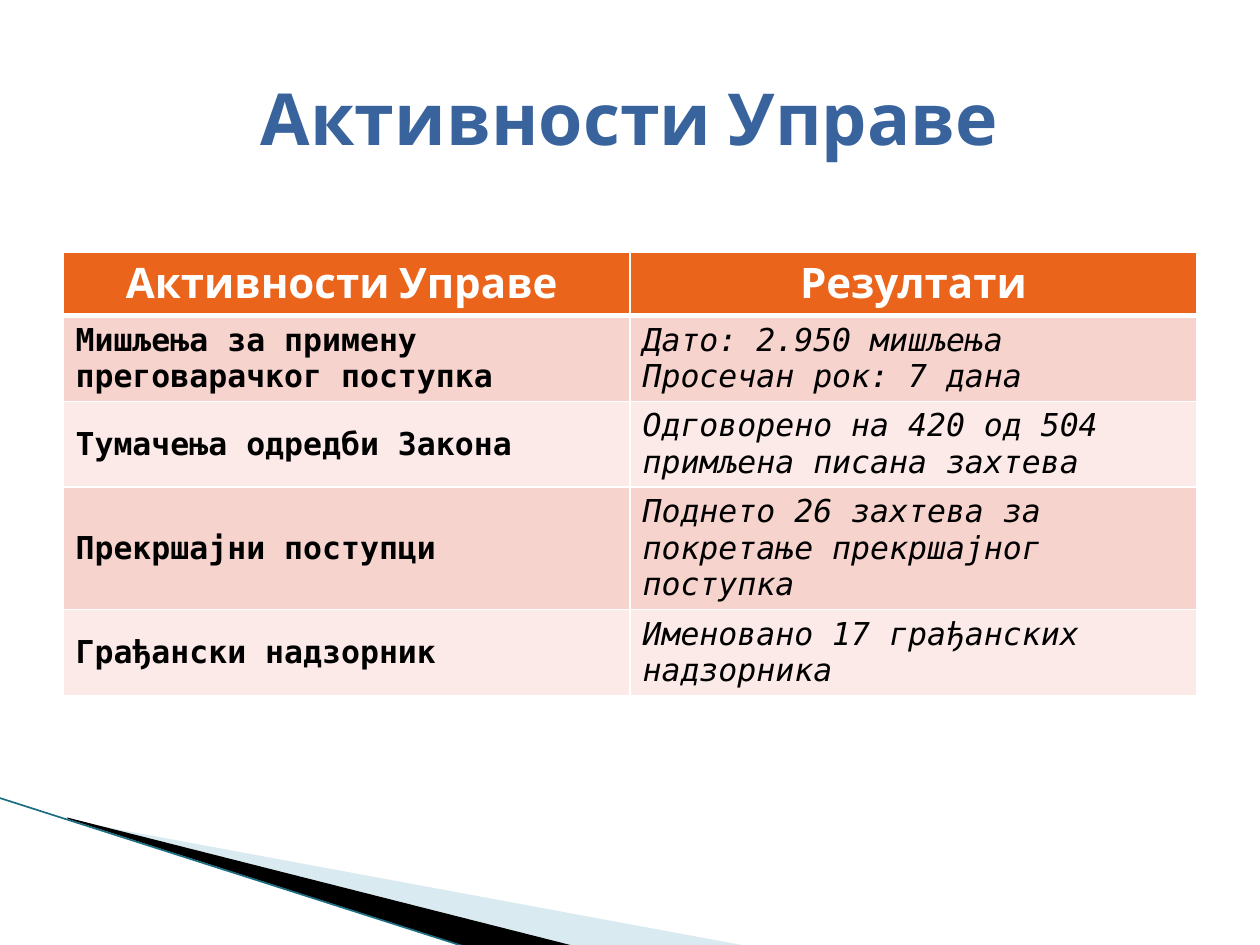
from lxml import etree
from pptx import Presentation
from pptx import util as u
from pptx.dml.color import RGBColor
from pptx.enum import shapes, text
from pptx.oxml import ns

WHITE = RGBColor(0xFF, 0xFF, 0xFF)
BLACK = RGBColor(0, 0, 0)
TITLE_BLUE = RGBColor(0x39, 0x63, 0x9D)
ORANGE = RGBColor(0xEB, 0x64, 0x1B)
ROW_PINKS = [RGBColor(0xF7, 0xD3, 0xCD), RGBColor(0xFB, 0xEA, 0xE8)]
PALE_BLUE = RGBColor(0xA0, 0xCB, 0xDC)
TEAL = RGBColor(0x1B, 0x6E, 0x82)

HEADING_FONT = "Cabin"
BODY_FONT = "DejaVu Sans Mono"

TITLE = "Активности Управе"
ROWS = [
    ("Активности Управе ", "Резултати"),
    ("Мишљења за примену преговарачког поступка",
     "Дато: 2.950 мишљења\nПросечан рок: 7 дана"),
    ("Тумачења одредби Закона",
     "Одговорено на 420 од 504 примљена писана захтева"),
    ("Прекршајни поступци",
     "Поднето 26 захтева за покретање прекршајног поступка"),
    ("Грађански надзорник", "Именовано 17 грађанских надзорника"),
]

# Corner decoration: points in cm, fill colour, opacity in percent
WEDGES = [
    ([(1.4, 16.54), (15.11, 19.08), (11.58, 19.08), (1.4, 16.51)], PALE_BLUE, 40),
    ([(1.35, 16.48), (11.61, 19.08), (9.45, 19.1), (1.37, 16.51)], BLACK, 100),
]
EDGE = [(-0.03, 16.08), (9.42, 19.1)]

MARGIN = 1.27
CONTENT_WIDTH = 22.86


def to_cm(point):
    return tuple(u.Cm(value) for value in point)


def add_wedge(slide, points, color, opacity):
    start, *others = map(to_cm, points)
    builder = slide.shapes.build_freeform(*start)
    builder.add_line_segments(others, close=True)
    shape = builder.convert_to_shape()
    shape.shadow.inherit = False
    shape.line.fill.background()
    shape.fill.solid()
    shape.fill.fore_color.rgb = color
    if opacity < 100:
        fill_color = shape.fill._xPr.find(".//" + ns.qn("a:srgbClr"))
        etree.SubElement(fill_color, ns.qn("a:alpha"), val=str(opacity * 1000))


def add_edge(slide):
    start, end = map(to_cm, EDGE)
    edge = slide.shapes.add_connector(shapes.MSO_CONNECTOR.STRAIGHT, *start, *end)
    edge.line.color.rgb = TEAL
    edge.line.width = u.Pt(0.95)
    etree.SubElement(edge._element.spPr, ns.qn("a:effectLst"))


def format_text(text_frame, font_name, size, color, bold=False, italic=False,
                alignment=text.PP_ALIGN.LEFT):
    for paragraph in text_frame.paragraphs:
        paragraph.alignment = alignment
        for run in paragraph.runs:
            font = run.font
            font.name, font.size = font_name, u.Pt(size)
            font.bold, font.italic = bold, italic
            font.color.rgb = color


def add_title(slide):
    box = slide.shapes.add_textbox(
        *to_cm((MARGIN, 0.76, CONTENT_WIDTH, 3.18)))
    frame = box.text_frame
    frame.word_wrap = True
    frame.vertical_anchor = text.MSO_ANCHOR.MIDDLE
    frame.text = TITLE
    format_text(frame, HEADING_FONT, 41, TITLE_BLUE, bold=True,
                alignment=text.PP_ALIGN.CENTER)


def set_borders(cell, widths):
    """Draw white borders; widths maps a side (L, R, T, B) to points."""
    properties = cell._tc.get_or_add_tcPr()
    for side, width in widths.items():
        line = etree.SubElement(properties, ns.qn("a:ln" + side), w=str(u.Pt(width)))
        fill = etree.SubElement(line, ns.qn("a:solidFill"))
        etree.SubElement(fill, ns.qn("a:srgbClr"), val=str(WHITE))


def add_activity_table(slide):
    row_height = 1.04
    table = slide.shapes.add_table(
        len(ROWS), 2,
        *to_cm((MARGIN, 5.08, CONTENT_WIDTH, row_height * len(ROWS)))).table
    for row_index, row in enumerate(ROWS):
        table.rows[row_index].height = u.Cm(row_height)
        is_header = row_index == 0
        for column_index, content in enumerate(row):
            cell = table.cell(row_index, column_index)
            cell.text_frame.text = content
            set_borders(cell, {"L": 1, "R": 1, "T": 3 if row_index == 1 else 1,
                               "B": 3 if is_header else 1})
            cell.fill.solid()
            if is_header:
                cell.fill.fore_color.rgb = ORANGE
                format_text(cell.text_frame, HEADING_FONT, 24, WHITE, bold=True,
                            alignment=text.PP_ALIGN.CENTER)
            else:
                cell.fill.fore_color.rgb = ROW_PINKS[(row_index - 1) % 2]
                cell.vertical_anchor = text.MSO_ANCHOR.MIDDLE
                is_result = column_index == 1
                format_text(cell.text_frame, BODY_FONT, 18, BLACK,
                            bold=not is_result, italic=is_result)


def main():
    presentation = Presentation()
    presentation.slide_width, presentation.slide_height = to_cm((25.4, 19.05))
    slide = presentation.slides.add_slide(presentation.slide_layouts[6])
    for wedge in WEDGES:
        add_wedge(slide, *wedge)
    add_edge(slide)
    add_activity_table(slide)
    add_title(slide)
    presentation.save("out.pptx")


if __name__ == "__main__":
    main()
